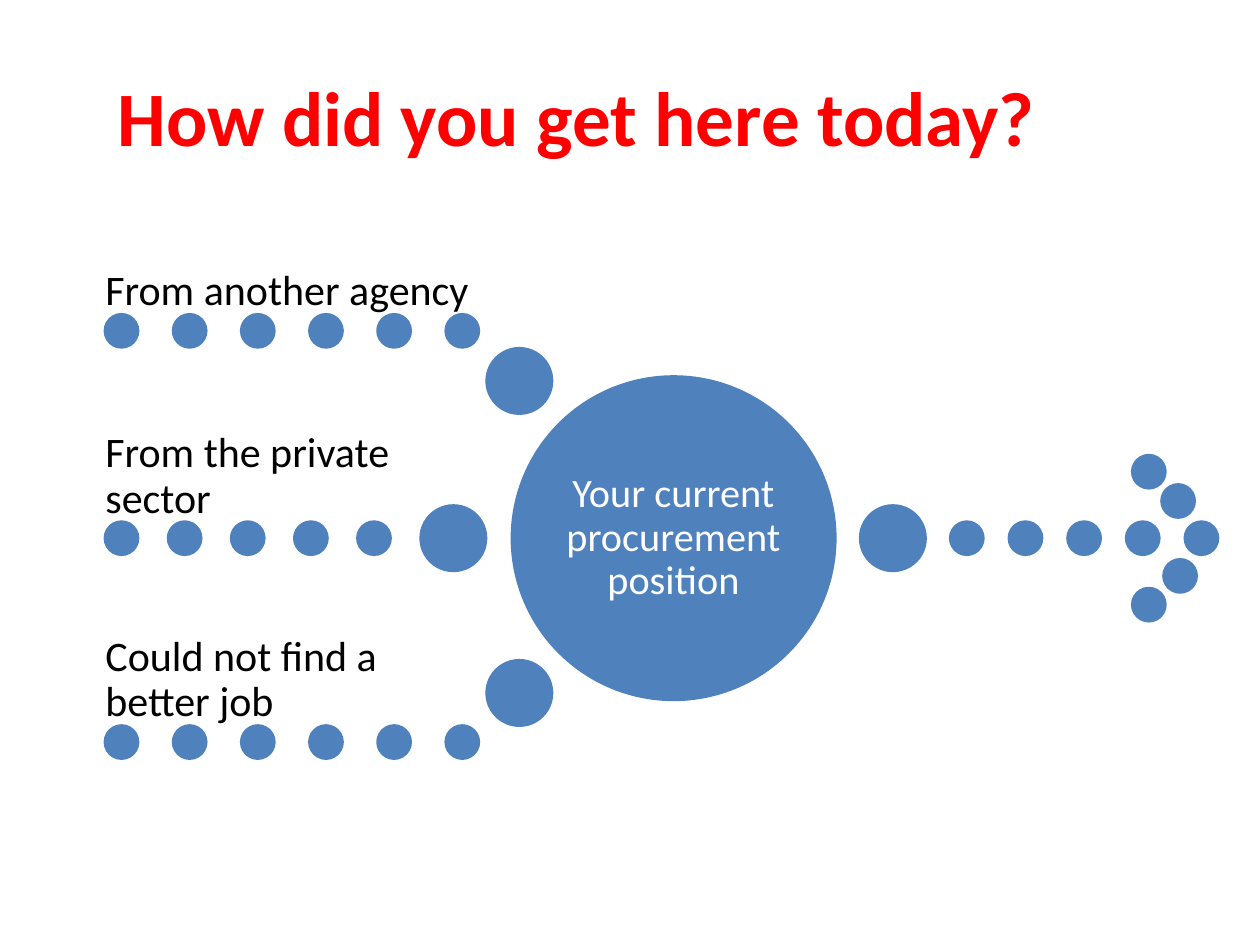
"""Build the slide on the routes that lead to a procurement position."""
from pptx import Presentation
from pptx.dml.color import RGBColor
from pptx.enum.shapes import MSO_SHAPE
from pptx.enum.text import MSO_ANCHOR, PP_ALIGN
from pptx.util import Cm, Pt

OVAL = MSO_SHAPE.OVAL
MIDDLE, BOTTOM = MSO_ANCHOR.MIDDLE, MSO_ANCHOR.BOTTOM
LEFT, CENTER = PP_ALIGN.LEFT, PP_ALIGN.CENTER

COLORS = {"title": "FF0000", "dot": "4F81BD", "label": "000000", "center": "FFFFFF"}
DOT, BIG_DOT, HUB = 0.65, 1.3, 6.5
START, AXIS = 2.45, 10.85
LABEL_HEIGHT = 1.65

ROUTES = [
    ("From another agency", 6.67, 9.32, 6, (10.47, 7.68)),
    ("From the private sector", AXIS, 7.54, 5, (9.14, AXIS)),
    ("Could not find a better job", 14.96, 9.32, 6, (10.47, 13.97)),
]
ARROW_TIPS = [(23.16, 9.51), (23.75, 10.1), (23.79, 11.61), (23.16, 12.19)]


def assign(target, values):
    """Set each named attribute of the target."""
    for name, value in values.items():
        setattr(target, name, value)


class SlideBuilder:
    """Holds the style and the current slide."""

    font_name = "Calibri"

    def __init__(self, page):
        self.page = page

    def set_text(self, shape, text, color, size, bold=False, align=LEFT,
                 anchor=MIDDLE, inset=0, spacing=0.9):
        """Fill a shape with one formatted paragraph."""
        frame = shape.text_frame
        assign(frame, {"text": text, "word_wrap": True, "vertical_anchor": anchor})
        for side in ("left", "right", "top", "bottom"):
            setattr(frame, f"margin_{side}", Cm(inset))
        para = frame.paragraphs[0]
        assign(para, {"alignment": align, "line_spacing": spacing})
        assign(para.font, {"name": self.font_name, "size": Pt(size), "bold": bold})
        para.font.color.rgb = RGBColor.from_string(COLORS[color])

    def title(self, text, left, top, width, height):
        """Place and format the title placeholder."""
        title = self.page.shapes.title
        box = {"left": left, "top": top, "width": width, "height": height}
        assign(title, {name: Cm(value) for name, value in box.items()})
        self.set_text(title, text, "title", 44, bold=True, inset=0.25, spacing=1.0)

    def circle(self, x, y, size=DOT):
        """Draw a circle around its centre."""
        circle = self.page.shapes.add_shape(
            OVAL, Cm(x - size / 2), Cm(y - size / 2), Cm(size), Cm(size))
        color = RGBColor.from_string(COLORS["dot"])
        circle.shadow.inherit = False
        circle.fill.solid()
        circle.fill.fore_color.rgb = color
        circle.line.color.rgb = color
        circle.line.width = Pt(2)
        return circle

    def dots(self, first, last, y, count):
        """Draw evenly spaced dots along a row."""
        step = (last - first) / (count - 1)
        for index in range(count):
            self.circle(first + index * step, y)

    def label(self, text, last, y):
        """Add a label that rests on a row of dots."""
        box = self.page.shapes.add_textbox(
            Cm(START - DOT / 2), Cm(y - DOT / 2 - LABEL_HEIGHT),
            Cm(last - START + DOT), Cm(LABEL_HEIGHT))
        self.set_text(box, text, "label", 24, anchor=BOTTOM)


def main():
    """Build and save the deck."""
    deck = Presentation()
    assign(deck, {"slide_width": Cm(25.4), "slide_height": Cm(19.05)})
    slide = SlideBuilder(deck.slides.add_slide(deck.slide_layouts[5]))
    slide.title("How did you get here today?", 2.12, 0.74, 22.43, 3.18)

    slide.dots(19.49, 24.22, AXIS, 5)
    slide.circle(18, AXIS, BIG_DOT)
    for x, y in ARROW_TIPS:
        slide.circle(x, y)

    hub = slide.circle(13.58, AXIS, HUB)
    slide.set_text(hub, "Your current procurement position", "center", 23,
                   align=CENTER, inset=0.08)

    for text, y, last, count, big_dot in ROUTES:
        slide.circle(*big_dot, BIG_DOT)
        slide.dots(START, last, y, count)
        slide.label(text, last, y)

    deck.save("out.pptx")


if __name__ == "__main__":
    main()
